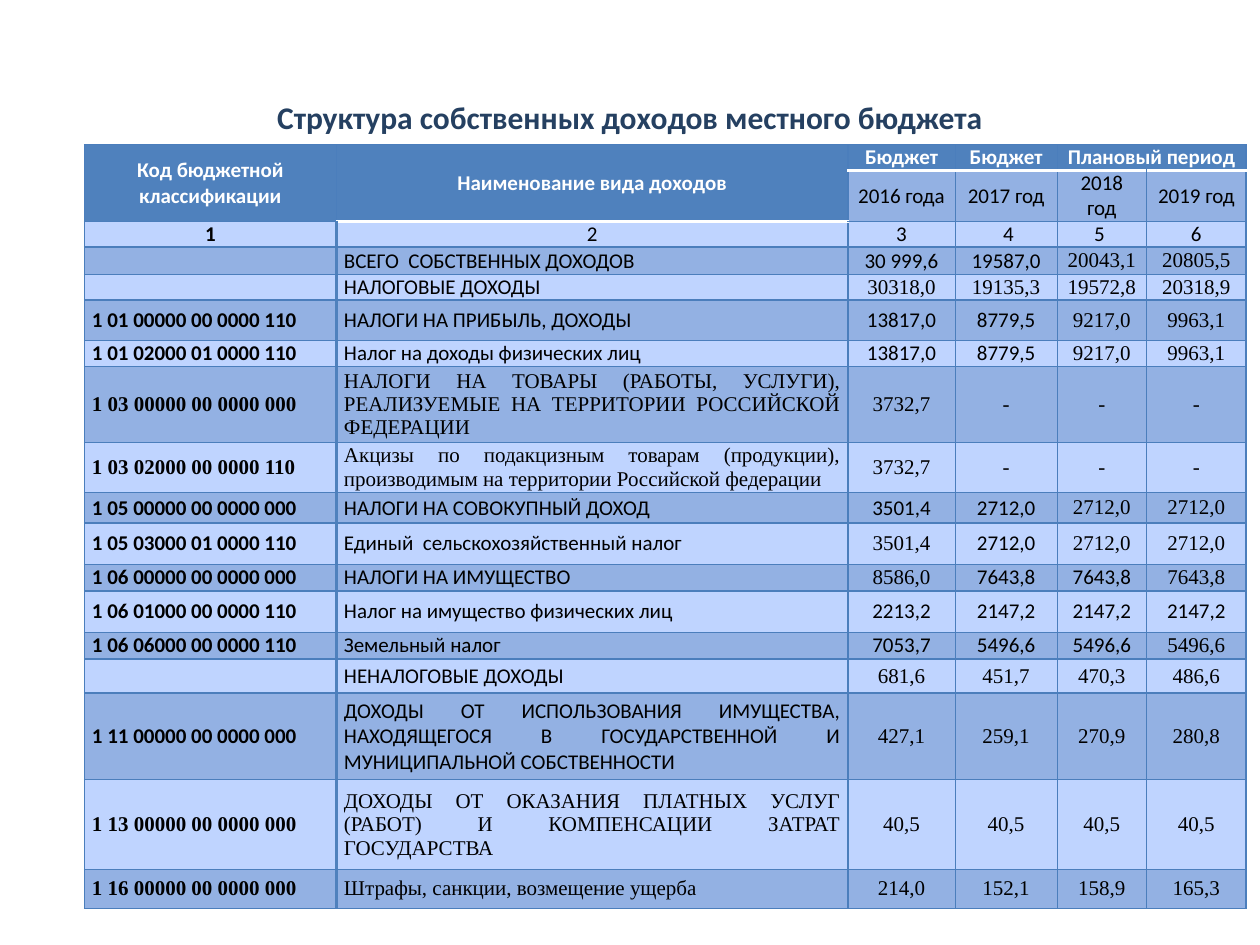
from lxml.etree import SubElement
from pptx import Presentation
from pptx.dml.color import RGBColor
from pptx.enum.text import MSO_ANCHOR, PP_ALIGN
from pptx.oxml.ns import qn
from pptx.util import Inches, Pt

COLORS = {"title": "254061", "header": "4F81BD", "white": "FFFFFF", "text": "000000",
          "dark": "93B1E3", "light": "BFD4FF", "grid": "4B7EBC"}
FONTS = {"c": "Calibri", "t": "Times New Roman"}

COLUMN_WIDTHS = [2, 4.06, 0.85, 0.81, 0.71, 0.79]
ROW_HEIGHTS = [0.2, 0.41, 0.2, 0.22, 0.2, 0.32, 0.21, 0.56, 0.38,
               0.24, 0.33, 0.21, 0.33, 0.21, 0.27, 0.69, 0.71, 0.31]

HEADER = [
    ["Код бюджетной классификации", "Наименование вида доходов",
     "Бюджет", "Бюджет", "Плановый период", ""],
    ["", "", "2016 года", "2017 год", "2018 год", "2019 год"],
    ["1", "2", "3", " 4", "5 ", "6"],
]

# Font letter for each column, code, name, then the four years
INCOME = [
    ("cccctt", "", "ВСЕГО  СОБСТВЕННЫХ ДОХОДОВ", "30 999,6", "19587,0", "20043,1", "20805,5"),
    ("cctttt", "", "НАЛОГОВЫЕ ДОХОДЫ", "30318,0", "19135,3", "19572,8", "20318,9"),
    ("cccctt", "1 01 00000 00 0000 110", "НАЛОГИ НА ПРИБЫЛЬ, ДОХОДЫ",
     "13817,0", "8779,5", "9217,0", "9963,1"),
    ("cccctt", "1 01 02000 01 0000 110", "Налог на доходы физических лиц",
     "13817,0", "8779,5", "9217,0", "9963,1"),
    ("tttttt", "1 03 00000 00 0000 000",
     "НАЛОГИ НА ТОВАРЫ (РАБОТЫ, УСЛУГИ), РЕАЛИЗУЕМЫЕ НА ТЕРРИТОРИИ РОССИЙСКОЙ ФЕДЕРАЦИИ",
     "3732,7", "-", "-", "-"),
    ("tttttt", "1 03 02000 00 0000 110",
     "Акцизы по подакцизным товарам (продукции), производимым на территории Российской федерации",
     "3732,7", "-", "-", "-"),
    ("cccctt", "1 05 00000 00 0000 000", "НАЛОГИ НА СОВОКУПНЫЙ ДОХОД",
     "3501,4", "2712,0", "2712,0", "2712,0"),
    ("cctctt", "1 05 03000 01 0000 110", "Единый  сельскохозяйственный налог",
     "3501,4", "2712,0", "2712,0", "2712,0"),
    ("cctcct", "1 06 00000 00 0000 000", "НАЛОГИ НА ИМУЩЕСТВО",
     "8586,0", "7643,8", "7643,8", "7643,8"),
    ("cccccc", "1 06 01000 00 0000 110", "Налог на имущество физических лиц",
     "2213,2", "2147,2", "2147,2", "2147,2"),
    ("ccccct", "1 06 06000 00 0000 110", "Земельный налог",
     "7053,7", "5496,6", "5496,6", "5496,6"),
    ("cctttt", "", "НЕНАЛОГОВЫЕ ДОХОДЫ", "681,6", "451,7", "470,3", "486,6"),
    ("cctttt", "1 11 00000 00 0000 000",
     "ДОХОДЫ ОТ ИСПОЛЬЗОВАНИЯ ИМУЩЕСТВА, НАХОДЯЩЕГОСЯ В ГОСУДАРСТВЕННОЙ И МУНИЦИПАЛЬНОЙ "
     "СОБСТВЕННОСТИ", "427,1", "259,1", "270,9", "280,8"),
    ("tttttt", "1 13 00000 00 0000 000",
     "ДОХОДЫ ОТ ОКАЗАНИЯ ПЛАТНЫХ УСЛУГ (РАБОТ) И КОМПЕНСАЦИИ ЗАТРАТ ГОСУДАРСТВА",
     "40,5", "40,5", "40,5", "40,5"),
    ("tttttt", "1 16 00000 00 0000 000", "Штрафы, санкции, возмещение ущерба",
     "214,0", "152,1", "158,9", "165,3"),
]


class BudgetSlide:
    def __init__(self, slide):
        self.slide = slide

    def style(self, paragraph, size, color, font="c", bold=False, align=PP_ALIGN.CENTER):
        paragraph.alignment = align
        paragraph.font.name = FONTS[font]
        paragraph.font.size = Pt(size)
        paragraph.font.bold = bold
        paragraph.font.color.rgb = RGBColor.from_string(COLORS[color])

    def title(self, text, left, top, width, height):
        box = self.slide.shapes.add_textbox(
            Inches(left), Inches(top), Inches(width), Inches(height))
        frame = box.text_frame
        frame.word_wrap = True
        frame.vertical_anchor = MSO_ANCHOR.MIDDLE
        frame.text = text
        self.style(frame.paragraphs[0], 18, "title", bold=True)

    def table(self, left, top, widths, heights):
        frame = self.slide.shapes.add_table(
            len(heights), len(widths), Inches(left), Inches(top),
            Inches(sum(widths)), Inches(sum(heights)))
        table = frame.table
        for column, width in zip(table.columns, widths):
            column.width = Inches(width)
        for row, height in zip(table.rows, heights):
            row.height = Inches(height)
        return table

    def borders(self, cell, special):
        properties = cell._tc.get_or_add_tcPr()
        for side in "LRTB":
            color, width = special.get(side, ("grid", 0.75))
            line = SubElement(properties, qn(f"a:ln{side}"), w=str(Pt(width)))
            fill = SubElement(line, qn("a:solidFill"))
            SubElement(fill, qn("a:srgbClr"), val=COLORS[color])

    def cell(self, cell, text, fill, special, anchor=MSO_ANCHOR.MIDDLE, **style):
        self.borders(cell, special)
        cell.fill.solid()
        cell.fill.fore_color.rgb = RGBColor.from_string(COLORS[fill])
        cell.margin_left = cell.margin_right = Inches(0.06)
        cell.margin_top = cell.margin_bottom = 0
        cell.vertical_anchor = anchor
        cell.text = text
        self.style(cell.text_frame.paragraphs[0], 12, **style)


def special_borders(row, col):
    """Sides of a cell that differ from the thin grid."""
    special = {}
    white, divider = ("white", 2), ("header", 2)
    if (row == 0 and col > 1) or (row == 1 and col == 1):
        special["B"] = white
    if (row == 1 and col > 1) or (row == 2 and col == 1):
        special["T"] = white
    if row > 1 and col < 2:
        special["R" if col == 0 else "L"] = divider
    return special


def main():
    deck = Presentation()
    deck.slide_width, deck.slide_height = Inches(10), Inches(7.5)
    page = BudgetSlide(deck.slides.add_slide(deck.slide_layouts[6]))
    page.title("Структура собственных доходов местного бюджета", 0.5, 0.3, 9, 1.25)
    table = page.table(0.67, 1.15, COLUMN_WIDTHS, ROW_HEIGHTS)

    # Header rows and column numbers
    for row, texts in enumerate(HEADER):
        for col, text in enumerate(texts):
            heading = row == 0 or (row == 1 and col < 2)
            low = row == 2 or (row == 0 and col > 2)
            fill = "header" if heading else "dark" if row == 1 else "light"
            page.cell(table.cell(row, col), text, fill, special_borders(row, col),
                      MSO_ANCHOR.BOTTOM if low else MSO_ANCHOR.MIDDLE,
                      color="white" if heading else "text",
                      bold=heading or (row == 2 and col == 0))
    for col in (0, 1):
        table.cell(0, col).merge(table.cell(1, col))
    table.cell(0, 4).merge(table.cell(0, 5))

    # Income rows in alternating shades
    for row, (fonts, *texts) in enumerate(INCOME, start=len(HEADER)):
        for col, (font, text) in enumerate(zip(fonts, texts)):
            page.cell(table.cell(row, col), text, "dark" if row % 2 else "light",
                      special_borders(row, col), color="text", font=font, bold=col == 0,
                      align=PP_ALIGN.JUSTIFY if col < 2 else PP_ALIGN.CENTER)

    deck.save("out.pptx")


if __name__ == "__main__":
    main()
